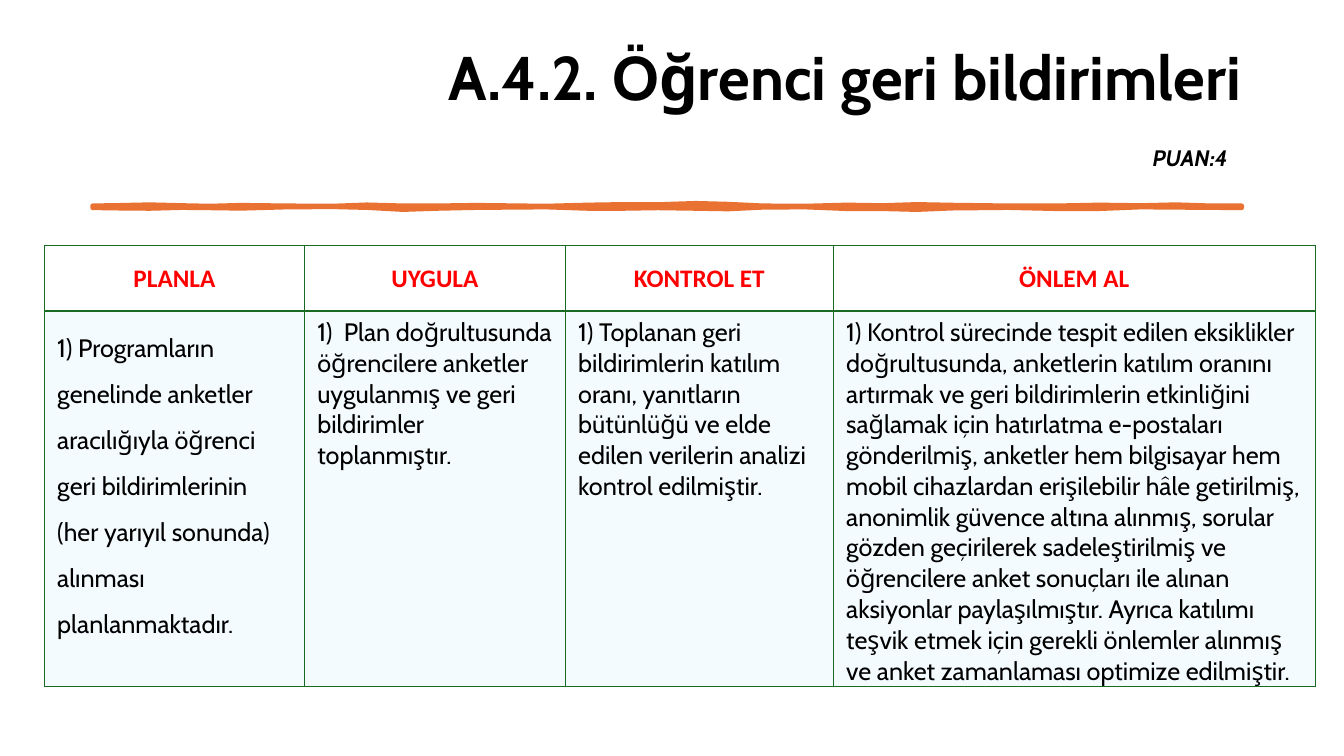
from lxml import etree
from pptx import Presentation
from pptx.dml.color import RGBColor
from pptx.enum.text import MSO_ANCHOR as ANCHOR, PP_ALIGN as ALIGN
from pptx.oxml.ns import qn
from pptx.util import Pt

BLACK = RGBColor(0x00, 0x00, 0x00)
RED = RGBColor(0xFF, 0x00, 0x00)
ORANGE = RGBColor(0xE9, 0x71, 0x32)
GREEN = RGBColor(0x19, 0x6B, 0x24)
PALE_BLUE = RGBColor(0xCA, 0xEE, 0xFB)


def add_run(p, text, color=BLACK, **font):
    r = p.add_run()
    r.text = text
    r.font.color.rgb = color
    for name, value in font.items():
        setattr(r.font, name, value)


def add_border(cell, side, width):
    ln = etree.SubElement(cell._tc.get_or_add_tcPr(), qn(f"a:ln{side}"), w=str(Pt(width)))
    fill = etree.SubElement(ln, qn("a:solidFill"))
    etree.SubElement(fill, qn("a:srgbClr"), val=str(GREEN))


prs = Presentation()
prs.slide_width, prs.slide_height = Pt(960), Pt(540)
s = prs.slides.add_slide(prs.slide_layouts[6])

# Title and score
tf = s.shapes.add_textbox(Pt(66), Pt(28.75), Pt(828), Pt(104.4)).text_frame
tf.word_wrap = True
tf.vertical_anchor = ANCHOR.MIDDLE
p = tf.paragraphs[0]
p.alignment, p.line_spacing = ALIGN.RIGHT, 0.9
add_run(p, "A.4.2. Öğrenci geri bildirimleri", size=Pt(44), name="Cabin", bold=True)
p.add_line_break()
add_run(p, "PUAN:4", size=Pt(16), name="Cabin", bold=True, italic=True)
add_run(p, " ", size=Pt(44), name="Cabin", bold=True)

# Brush stroke: x, top, bottom
STROKE = [
    (66.2, 147, 148.5), (85, 146.7, 148.8), (107, 146.2, 149), (130, 146.8, 148.4),
    (150, 147.2, 148.6), (172, 146.6, 148.9), (205, 147, 148), (238, 147.2, 147.8),
    (262, 146.3, 148.4), (288, 147, 149.8), (312, 147, 149), (340, 146.6, 148.4),
    (390, 147.2, 148), (420, 146.4, 149), (445, 146, 149), (470, 146.1, 148.6),
    (497, 145.2, 149), (520, 145.8, 149.4), (545, 147, 148.2), (575, 147.2, 148),
    (605, 146.4, 149.2), (630, 146.8, 149.2), (655, 146, 149.8), (680, 146.5, 148.8),
    (720, 147, 148.4), (755, 147, 149.2), (785, 146.4, 149.2), (815, 146.8, 148),
    (840, 146.2, 148.2), (865, 147, 148.4), (887, 147, 148.5),
]
outline = [(Pt(x), Pt(top)) for x, top, _ in STROKE]
outline += [(Pt(x), Pt(bottom)) for x, _, bottom in reversed(STROKE)]
builder = s.shapes.build_freeform(*outline[0])
builder.add_line_segments(outline[1:], close=True)
sp = builder.convert_to_shape()
sp.shadow.inherit = False
sp.fill.solid()
sp.fill.fore_color.rgb = ORANGE
sp.line.color.rgb = ORANGE
sp.line.width = Pt(3.25)

# Table: heading, text, column width
COLUMNS = [
    ("PLANLA",
     "1) Programların genelinde anketler aracılığıyla öğrenci geri bildirimlerinin "
     "(her yarıyıl sonunda) alınması planlanmaktadır.", 185.8),
    ("UYGULA",
     "1)  Plan doğrultusunda öğrencilere anketler uygulanmış ve geri bildirimler "
     "toplanmıştır.", 186.4),
    ("KONTROL ET",
     "1) Toplanan geri bildirimlerin katılım oranı, yanıtların bütünlüğü ve elde "
     "edilen verilerin analizi kontrol edilmiştir.", 191.4),
    ("ÖNLEM AL",
     "1) Kontrol sürecinde tespit edilen eksiklikler doğrultusunda, anketlerin katılım "
     "oranını artırmak ve geri bildirimlerin etkinliğini sağlamak için hatırlatma "
     "e-postaları gönderilmiş, anketler hem bilgisayar hem mobil cihazlardan erişilebilir "
     "hâle getirilmiş, anonimlik güvence altına alınmış, sorular gözden geçirilerek "
     "sadeleştirilmiş ve öğrencilere anket sonuçları ile alınan aksiyonlar paylaşılmıştır. "
     "Ayrıca katılımı teşvik etmek için gerekli önlemler alınmış ve anket zamanlaması "
     "optimize edilmiştir.", 344.2),
]
ROWS = [
    {"height": 46.6, "margins": (3.6, 0), "borders": {"L": 1, "R": 1, "T": 1, "B": 2},
     "anchor": ANCHOR.MIDDLE, "font": {"name": "Calibri", "color": RED, "bold": True},
     "para": {"alignment": ALIGN.CENTER, "line_spacing": 1.07, "space_after": Pt(8)}},
    {"height": 264.2, "margins": (9.2, 4.6), "borders": {"L": 1, "R": 1, "T": 2, "B": 1},
     "anchor": ANCHOR.TOP, "font": {"name": "Cabin", "color": BLACK, "bold": False},
     "para": {"alignment": ALIGN.LEFT}},
]
width = sum(column[2] for column in COLUMNS)
height = sum(row["height"] for row in ROWS)
table = s.shapes.add_table(len(ROWS), len(COLUMNS), Pt(31.7), Pt(175.5),
                           Pt(width), Pt(height)).table
table.first_row = table.horz_banding = False

for i, row in enumerate(ROWS):
    table.rows[i].height = Pt(row["height"])
    for j, column in enumerate(COLUMNS):
        table.columns[j].width = Pt(column[2])
        cell = table.cell(i, j)
        side, edge = row["margins"]
        cell.margin_left = cell.margin_right = Pt(side)
        cell.margin_top = cell.margin_bottom = Pt(edge)
        cell.vertical_anchor = row["anchor"]
        p = cell.text_frame.paragraphs[0]
        for name, value in row["para"].items():
            setattr(p, name, value)
        add_run(p, column[i], size=Pt(18), **row["font"])
        for name, weight in row["borders"].items():
            add_border(cell, name, weight)
        if i == 0:
            cell.fill.background()
        else:
            cell.fill.solid()
            cell.fill.fore_color.rgb = PALE_BLUE
            tint = cell._tc.tcPr.find(f"{qn('a:solidFill')}/{qn('a:srgbClr')}")
            etree.SubElement(tint, qn("a:alpha"), val="20000")

# The first column's text is set with wider lines
table.cell(1, 0).text_frame.paragraphs[0].line_spacing = 1.5

prs.save("out.pptx")
